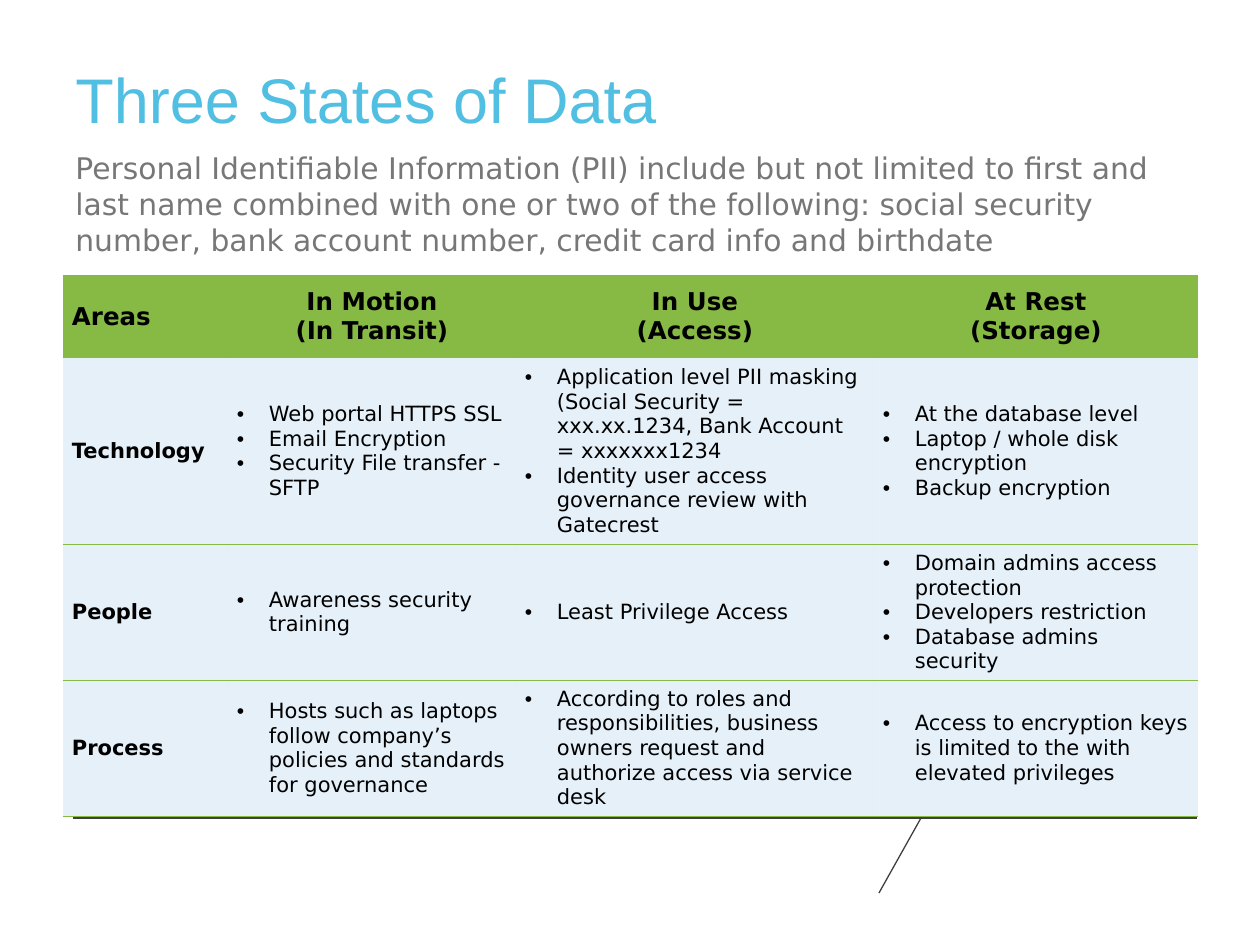
from lxml import etree
from pptx import Presentation
from pptx.dml.color import RGBColor
from pptx.enum.shapes import MSO_CONNECTOR
from pptx.enum.text import MSO_ANCHOR, PP_ALIGN
from pptx.oxml.ns import qn
from pptx.util import Pt

EMU_PER_PX = 914400 / 126
STRAIGHT = MSO_CONNECTOR.STRAIGHT
TOP, MIDDLE = MSO_ANCHOR.TOP, MSO_ANCHOR.MIDDLE
LEFT, CENTER = PP_ALIGN.LEFT, PP_ALIGN.CENTER

TITLE_FONT, BODY_FONT = "Arial", "DejaVu Sans"
BLUE, GRAY, BLACK = "51BFE1", "777777", "000000"
GREEN, CELL_BLUE, LINE_COLOR = "87BA44", "0071C5", "3F3F42"
NO_GRID_STYLE = "{2D5ABB26-0587-4C30-8999-92F81FD0307C}"

SUBTITLE = (
    "Personal Identifiable Information (PII) include but not limited to first and "
    "last name combined with one or two of the following: social security number, "
    "bank account number, credit card info and birthdate"
)
COLUMN_WIDTHS = [165, 288, 358, 324]
ROW_HEIGHTS = [83, 185, 133, 132]
HEADERS = ["Areas", "In Motion\n(In Transit)", "In Use\n(Access)", "At Rest\n(Storage)"]
AREAS = [
    [
        "Technology",
        "Web portal HTTPS SSL\nEmail Encryption\nSecurity File transfer - SFTP",
        "Application level PII masking (Social Security = xxx.xx.1234, "
        "Bank Account = xxxxxxx1234\n"
        "Identity user access governance review with Gatecrest",
        "At the database level\nLaptop / whole disk encryption\nBackup encryption",
    ],
    [
        "People",
        "Awareness security training",
        "Least Privilege Access",
        "Domain admins access protection\nDevelopers restriction\nDatabase admins security",
    ],
    [
        "Process",
        "Hosts such as laptops follow company’s policies and standards for governance",
        "According to roles and responsibilities, business owners request and "
        "authorize access via service desk",
        "Access to encryption keys is limited to the with elevated privileges",
    ],
]


def px(length):
    return round(length * EMU_PER_PX)


def rgb(color):
    return RGBColor.from_string(color)


class StateSlide:
    def __init__(self, slide):
        self.slide = slide

    def format_text(self, text_frame, size, color, font=BODY_FONT, bold=False, align=LEFT):
        for paragraph in text_frame.paragraphs:
            paragraph.alignment = align
            for run in paragraph.runs:
                run.font.name = font
                run.font.size = Pt(size)
                run.font.bold = bold
                run.font.color.rgb = rgb(color)

    def text(self, box, text, size, color, font=BODY_FONT, spacing=1.0):
        shape = self.slide.shapes.add_textbox(*map(px, box))
        text_frame = shape.text_frame
        text_frame.word_wrap = True
        text_frame.vertical_anchor = TOP
        text_frame.text = text
        text_frame.paragraphs[0].line_spacing = spacing
        self.format_text(text_frame, size, color, font)

    def line(self, start, end):
        connector = self.slide.shapes.add_connector(STRAIGHT, *map(px, start + end))
        connector.line.color.rgb = rgb(LINE_COLOR)
        connector.line.width = Pt(0.75)
        properties = connector.element.find(qn("p:spPr"))
        etree.SubElement(properties, qn("a:effectLst"))

    def bullets(self, text_frame):
        for paragraph in text_frame.paragraphs:
            properties = paragraph._p.get_or_add_pPr()
            properties.set("marL", str(px(32)))
            properties.set("indent", str(-px(32)))
            etree.SubElement(properties, qn("a:buFont"), typeface="Arial")
            etree.SubElement(properties, qn("a:buChar"), char="•")

    def cell(self, cell, text, size, fill, bold=False, align=LEFT):
        cell.margin_left = cell.margin_right = px(9)
        cell.margin_top = cell.margin_bottom = px(5)
        cell.vertical_anchor = MIDDLE
        cell.fill.solid()
        cell.fill.fore_color.rgb = rgb(fill)
        cell.text_frame.text = text
        self.format_text(cell.text_frame, size, BLACK, bold=bold, align=align)

    def tint_and_border(self, cell):
        properties = cell._tc.get_or_add_tcPr()
        color = properties.find(qn("a:solidFill")).find(qn("a:srgbClr"))
        etree.SubElement(color, qn("a:alpha"), val="10000")
        border = etree.Element(qn("a:lnB"), w=str(Pt(1)))
        border_fill = etree.SubElement(border, qn("a:solidFill"))
        etree.SubElement(border_fill, qn("a:srgbClr"), val=GREEN)
        properties.insert(0, border)

    def table(self, left, top, headers, rows):
        size = sum(COLUMN_WIDTHS), sum(ROW_HEIGHTS)
        frame = self.slide.shapes.add_table(
            len(rows) + 1, len(headers), *map(px, (left, top, *size))
        )
        table = frame.table
        table.horz_banding = False
        next(frame.element.iter(qn("a:tableStyleId"))).text = NO_GRID_STYLE
        for column, width in zip(table.columns, COLUMN_WIDTHS):
            column.width = px(width)
        for row, height in zip(table.rows, ROW_HEIGHTS):
            row.height = px(height)
        for index, header in enumerate(headers):
            align = CENTER if index else LEFT
            self.cell(table.cell(0, index), header, 14, GREEN, True, align)
        for row_index, row in enumerate(rows, 1):
            for index, text in enumerate(row):
                cell = table.cell(row_index, index)
                self.cell(cell, text, 12, CELL_BLUE, bold=index == 0)
                self.tint_and_border(cell)
                if index:
                    self.bullets(cell.text_frame)


def main():
    presentation = Presentation()
    presentation.slide_width, presentation.slide_height = px(1260), px(945)
    page = StateSlide(presentation.slides.add_slide(presentation.slide_layouts[6]))
    page.line((73, 818), (1197, 818))
    page.line((879, 893), (921, 818))
    page.text((63, 63, 725, 145), "Three States of Data", 36, BLUE, TITLE_FONT, 0.9)
    page.text((63, 144, 1124, 108), SUBTITLE, 17, GRAY)
    page.table(63, 275, HEADERS, AREAS)
    presentation.save("out.pptx")


if __name__ == "__main__":
    main()
